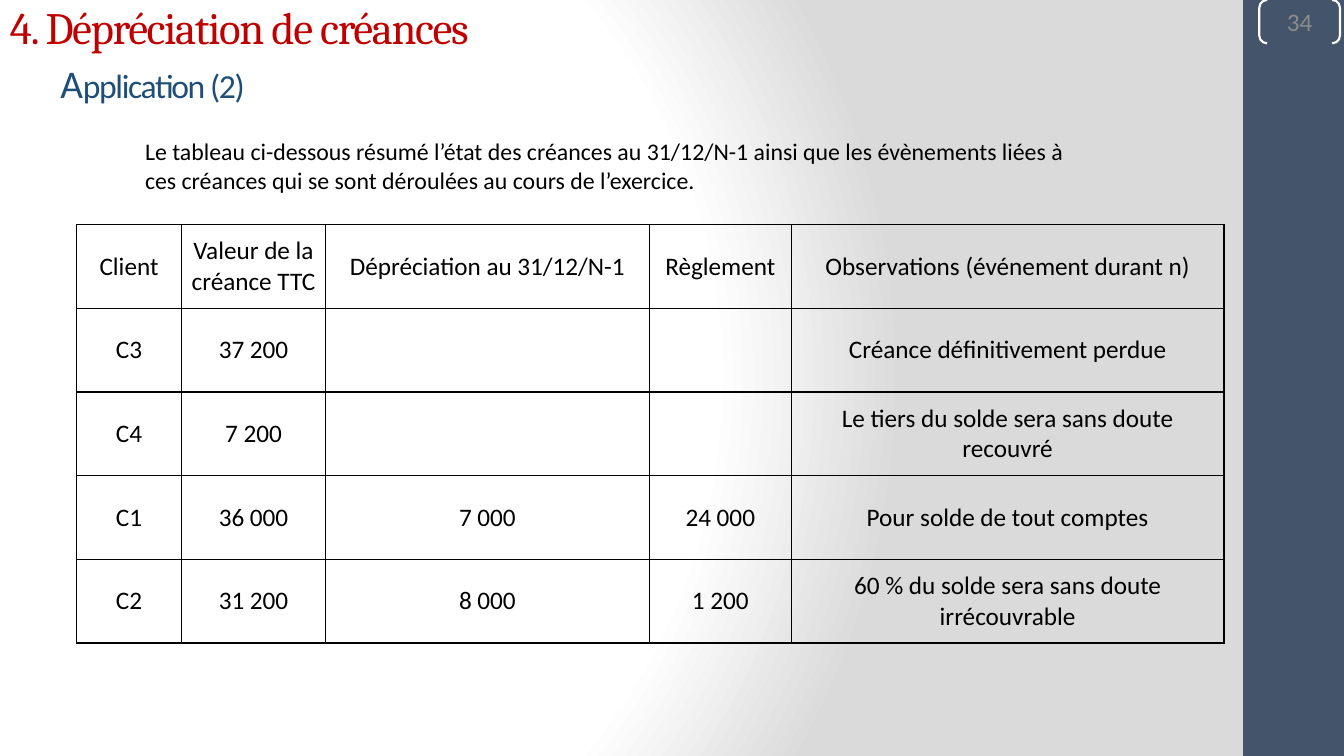
from dataclasses import dataclass, field

from lxml import etree
from pptx import Presentation
from pptx import util as u
from pptx.dml.color import RGBColor
from pptx.enum import shapes, text
from pptx.oxml import parse_xml
from pptx.oxml.ns import nsdecls, qn

BLACK, WHITE, NAVY, GREY = "000000", "FFFFFF", "44546A", "8C8C8C"
RED, BLUE = "C00000", "1F4E79"
MIDDLE, CENTER = text.MSO_ANCHOR.MIDDLE, text.PP_ALIGN.CENTER


@dataclass
class Span:
    words: str
    size: float
    color: str = BLACK
    font: str = "Calibri"
    spacing: int = 0


@dataclass
class TextBlock:
    left: float
    top: float
    width: float
    height: float
    paragraphs: list[list[Span]]
    frame: dict = field(default_factory=dict)
    indent: float = 0


TITLE = TextBlock(0, 0.22, 11.2, 0.63, [
    [Span("4. Dépréciation de créances", 32, RED, "Cambria", -100)],
    [Span("\t", 32, RED, "Cambria", -100),
     Span("A", 28, BLUE, spacing=-100),
     Span("pplication (2)", 24, BLUE, spacing=-100)],
], {"vertical_anchor": MIDDLE})

INTRO = TextBlock(1.22, 1.31, 9.46, 0.55, [[Span(
    "Le tableau ci-dessous résumé l’état des créances au 31/12/N-1 ainsi que "
    "les évènements liées à ces créances qui se sont déroulées au cours de l’exercice.",
    17)]], indent=0.12)

COLUMN_WIDTHS = [1.04, 1.43, 3.21, 1.41, 4.29]
ROW_HEIGHT = 0.83
RECEIVABLES = [
    ["Client", "Valeur de la créance TTC", "Dépréciation au 31/12/N-1",
     "Règlement", "Observations (événement durant n)"],
    ["C3", "37 200", "", "", "Créance définitivement perdue"],
    ["C4", "7 200", "", "", "Le tiers du solde sera sans doute recouvré"],
    ["C1", "36 000", "7 000", "24 000", "Pour solde de tout comptes"],
    ["C2", "31 200", "8 000", "1 200", "60 % du solde sera sans doute irrécouvrable"],
]


def rgb(value: str) -> RGBColor:
    return RGBColor.from_string(value)


def apply(target, values: dict) -> None:
    for name, value in values.items():
        setattr(target, name, value)


def add_span(paragraph, span: Span) -> None:
    run = paragraph.add_run()
    run.text = span.words
    apply(run.font, {"size": u.Pt(span.size), "name": span.font})
    run.font.color.rgb = rgb(span.color)
    if span.spacing:
        run.font._element.set("spc", str(span.spacing))


def add_text_block(slide, block: TextBlock) -> None:
    box = slide.shapes.add_textbox(
        *map(u.Inches, (block.left, block.top, block.width, block.height)))
    frame = box.text_frame
    apply(frame, {"word_wrap": True, **block.frame})
    for index, spans in enumerate(block.paragraphs):
        paragraph = frame.add_paragraph() if index else frame.paragraphs[0]
        if block.indent:
            properties = paragraph._p.get_or_add_pPr()
            properties.set("marL", str(u.Inches(block.indent)))
            properties.set("indent", "0")
        for span in spans:
            add_span(paragraph, span)


def set_background(slide) -> None:
    """White glow from the left, fading to light grey on the right."""
    slide.background.fill.solid()
    solid = slide.element.find(".//" + qn("p:bgPr")).find(qn("a:solidFill"))
    stops = "".join(
        f'<a:gs pos="{percent * 1000}"><a:srgbClr val="{color}"/></a:gs>'
        for percent, color in ((0, WHITE), (75, WHITE), (100, "DADADA")))
    solid.getparent().replace(solid, parse_xml(
        f'<a:gradFill rotWithShape="1" {nsdecls("a")}><a:gsLst>{stops}</a:gsLst>'
        '<a:path path="circle"><a:fillToRect l="20000" t="50000" r="100000" b="50000"/>'
        '</a:path></a:gradFill>'))


def add_side_band(slide) -> None:
    band = slide.shapes.add_shape(
        shapes.MSO_SHAPE.RECTANGLE, *map(u.Inches, (12.33, 0, 1, 7.5)))
    band.shadow.inherit = False
    band.fill.solid()
    band.fill.fore_color.rgb = rgb(NAVY)
    band.line.fill.background()


def add_page_number(slide) -> None:
    bracket = slide.shapes.add_shape(
        shapes.MSO_SHAPE.DOUBLE_BRACKET, *map(u.Inches, (12.49, 0, 0.8, 0.43)))
    bracket.adjustments[0] = 0.18
    bracket.shadow.inherit = False
    bracket.fill.background()
    bracket.line.color.rgb = rgb(WHITE)
    bracket.line.width = u.Pt(1.5)
    frame = bracket.text_frame
    apply(frame, {"margin_left": 0, "margin_right": 0, "margin_top": 0,
                  "margin_bottom": 0, "vertical_anchor": MIDDLE})
    frame.paragraphs[0].alignment = CENTER
    add_span(frame.paragraphs[0], Span("34", 18, GREY))


def add_borders(cell) -> None:
    properties = cell._tc.get_or_add_tcPr()
    for index, side in enumerate(("lnL", "lnR", "lnT", "lnB")):
        line = etree.Element(qn(f"a:{side}"), w=str(u.Pt(1)))
        fill = etree.SubElement(line, qn("a:solidFill"))
        etree.SubElement(fill, qn("a:srgbClr"), val=BLACK)
        properties.insert(index, line)


def add_receivables_table(slide) -> None:
    table = slide.shapes.add_table(
        len(RECEIVABLES), len(COLUMN_WIDTHS), u.Inches(0.76), u.Inches(2.23),
        u.Inches(sum(COLUMN_WIDTHS)), u.Inches(ROW_HEIGHT * len(RECEIVABLES))).table
    apply(table, {"first_row": False, "horz_banding": False})
    for column, width in zip(table.columns, COLUMN_WIDTHS):
        column.width = u.Inches(width)
    for row, entries in zip(table.rows, RECEIVABLES):
        row.height = u.Inches(ROW_HEIGHT)
        for cell, entry in zip(row.cells, entries):
            cell.fill.background()
            cell.vertical_anchor = MIDDLE
            add_borders(cell)
            if entry:
                paragraph = cell.text_frame.paragraphs[0]
                paragraph.alignment = CENTER
                add_span(paragraph, Span(entry, 18))


def main() -> None:
    deck = Presentation()
    apply(deck, {"slide_width": u.Inches(13.33), "slide_height": u.Inches(7.5)})
    slide = deck.slides.add_slide(deck.slide_layouts[6])
    set_background(slide)
    add_side_band(slide)
    add_page_number(slide)
    add_text_block(slide, INTRO)
    add_text_block(slide, TITLE)
    add_receivables_table(slide)
    deck.save("out.pptx")


if __name__ == "__main__":
    main()
